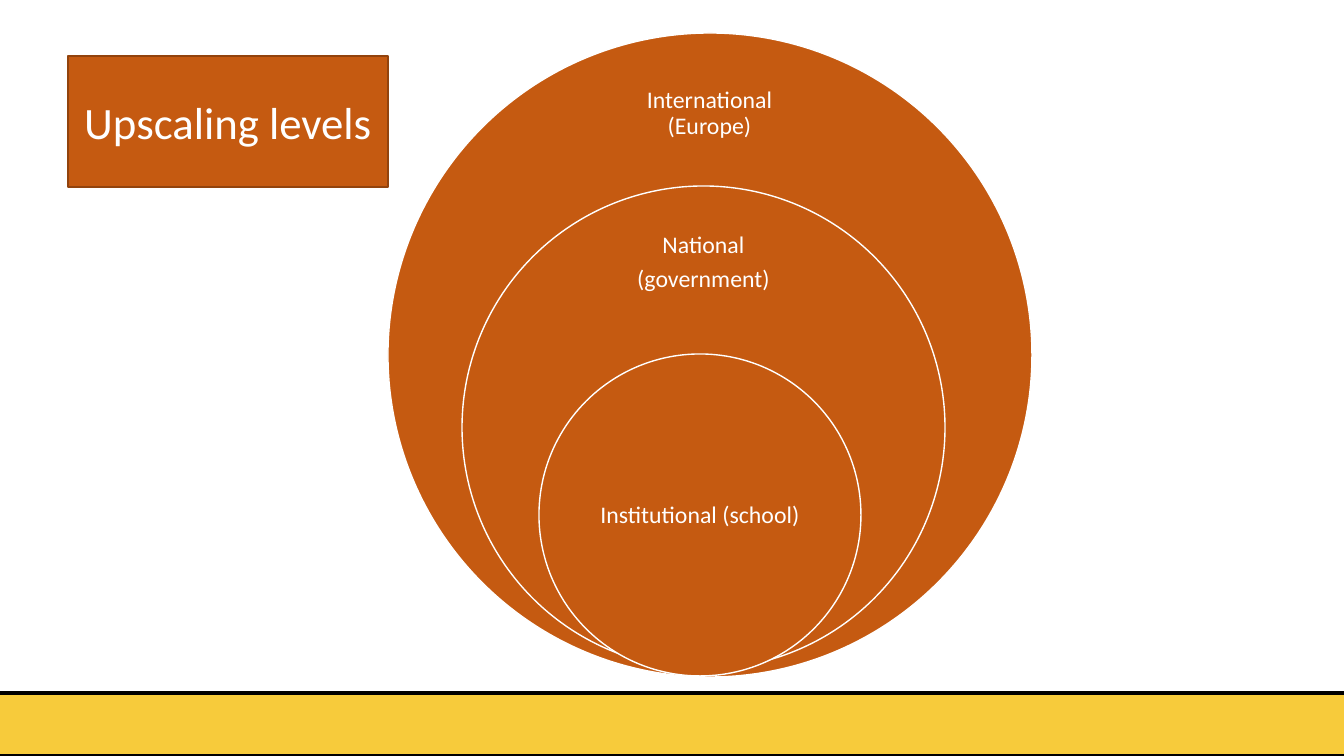
from pptx import Presentation
from pptx.dml.color import RGBColor
from pptx.enum.shapes import MSO_SHAPE
from pptx.enum.text import MSO_ANCHOR, MSO_AUTO_SIZE, PP_ALIGN
from pptx.util import Emu, Pt

RECT, OVAL = MSO_SHAPE.RECTANGLE, MSO_SHAPE.OVAL
MIDDLE, CENTER, NO_FIT = MSO_ANCHOR.MIDDLE, PP_ALIGN.CENTER, MSO_AUTO_SIZE.NONE
ORANGE = RGBColor(0xC5, 0x5A, 0x11)
BROWN = RGBColor(0x92, 0x43, 0x0D)
YELLOW = RGBColor(0xF7, 0xCB, 0x3B)
WHITE = RGBColor(0xFF, 0xFF, 0xFF)
BLACK = RGBColor(0, 0, 0)
FONT = "Calibri"
WIDTH, HEIGHT = 1344, 756
SCALE = 12192000 / WIDTH

TITLE = "Upscaling levels"
TITLE_BOX = (68, 56, 320, 131)
BAND_BOX = (-37, 693, 1418, 63)
LEVELS = [
    (["International (Europe)"], (388, 33, 644), (597, 65, 225, 97)),
    (["National", "(government)"], (462, 186, 483), (591, 217, 225, 91)),
    (["Institutional (school)"], (539, 354, 322), (586, 435, 228, 161)),
]


def px(n):
    return Emu(round(n * SCALE))


def paint(s, fill, line, weight):
    s.fill.solid()
    s.fill.fore_color.rgb = fill
    s.line.color.rgb = line
    s.line.width = Pt(weight)


def add_shape(kind, box, fill, line, weight):
    s = slide.shapes.add_shape(kind, *map(px, box))
    s.shadow.inherit = False
    paint(s, fill, line, weight)


def write(s, lines, size, spacing):
    tf = s.text_frame
    tf.word_wrap = True
    tf.auto_size = NO_FIT
    tf.vertical_anchor = MIDDLE
    for i, line in enumerate(lines):
        p = tf.add_paragraph() if i else tf.paragraphs[0]
        p.alignment = CENTER
        p.line_spacing = spacing
        p.space_before = Pt(6 if i else 0)
        r = p.add_run()
        r.text = line
        r.font.name = FONT
        r.font.size = Pt(size)
        r.font.color.rgb = WHITE
    return tf


prs = Presentation()
prs.slide_width, prs.slide_height = px(WIDTH), px(HEIGHT)
slide = prs.slides.add_slide(prs.slide_layouts[5])

add_shape(RECT, BAND_BOX, YELLOW, BLACK, 3)

for lines, (left, top, size), label_box in LEVELS:
    add_shape(OVAL, (left, top, size, size), ORANGE, WHITE, 1)
    label = slide.shapes.add_textbox(*map(px, label_box))
    tf = write(label, lines, 17, 0.9)
    tf.margin_left = tf.margin_right = tf.margin_top = tf.margin_bottom = px(13)

title = slide.shapes.title
title.left, title.top, title.width, title.height = map(px, TITLE_BOX)
paint(title, ORANGE, BROWN, 1)
write(title, [TITLE], 32, 1.0)

prs.save("out.pptx")
